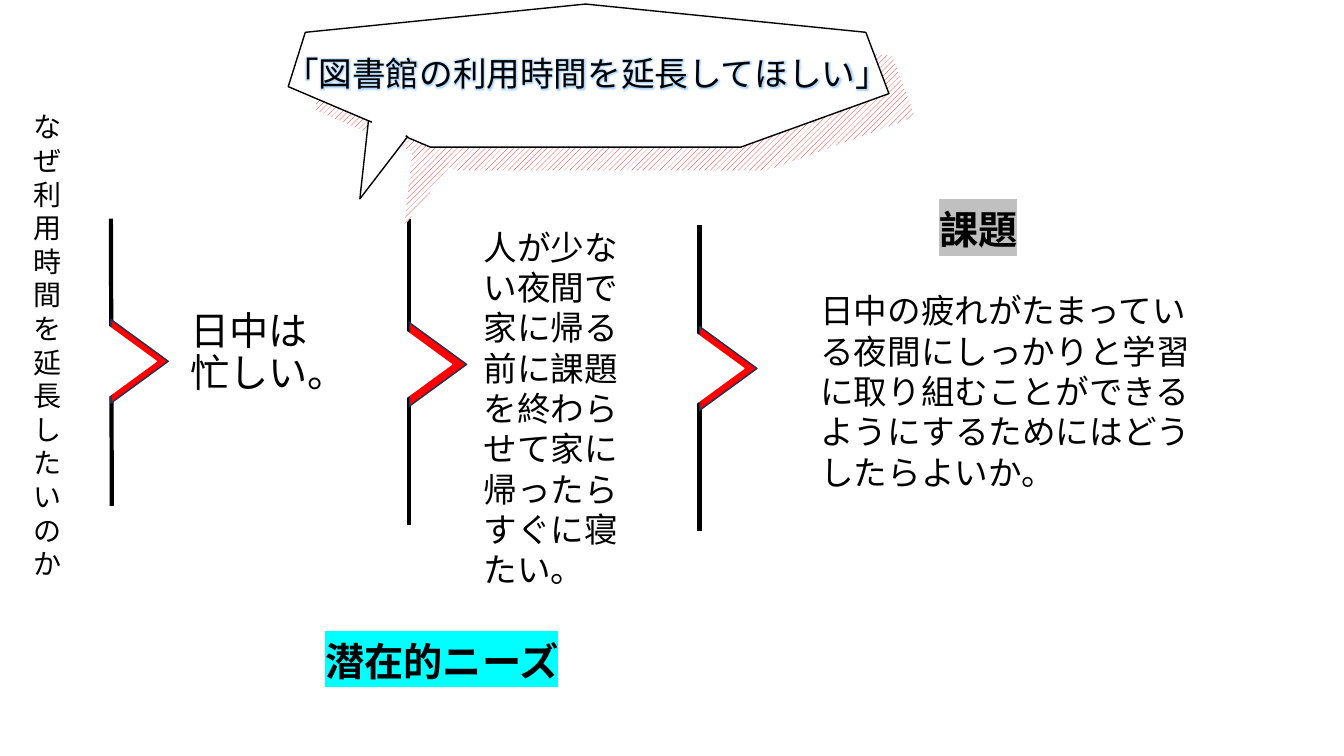
import pptx
import pptx.dml.color
import pptx.enum.dml
import pptx.enum.shapes
import pptx.enum.text
import pptx.oxml
import pptx.oxml.ns
import pptx.util

Pt = pptx.util.Pt
SHAPES = pptx.enum.shapes.MSO_SHAPE
FONT = "Noto Sans CJK JP"
BLACK, WHITE, RED, NAVY = "000000", "FFFFFF", "FF0000", "1E3256"
BUBBLE = [(0, 59), (12.2, 20.2), (212.4, 0), (412.6, 20.2),
          (429.1, 64), (323.3, 102.2), (101.5, 102.2)]
NAMESPACE = pptx.oxml.ns.nsdecls("a")


def color(value):
    return pptx.dml.color.RGBColor.from_string(value)


def paint(shape, fill, line):
    shape.shadow.inherit = False
    shape.fill.solid()
    shape.fill.fore_color.rgb = color(fill)
    shape.line.color.rgb = color(line)
    shape.line.width = Pt(1)


def hatch(shape):
    shape.shadow.inherit = False
    shape.fill.patterned()
    shape.fill.pattern = pptx.enum.dml.MSO_PATTERN.WIDE_UPWARD_DIAGONAL
    shape.fill.fore_color.rgb = color(RED)
    shape.fill.back_color.rgb = color(WHITE)
    shape.line.fill.background()


def add_rotated(slide, kind, left, top, width, height, rotation):
    shape = slide.shapes.add_shape(kind, Pt(left), Pt(top), Pt(width), Pt(height))
    shape.rotation = rotation
    return shape


def add_bubble(slide, left, top):
    points = [(Pt(left + x), Pt(top + y)) for x, y in BUBBLE]
    builder = slide.shapes.build_freeform(*points[0])
    builder.add_line_segments(points[1:], close=True)
    return builder.convert_to_shape()


def add_tail(slide, left, top):
    return add_rotated(slide, SHAPES.FLOWCHART_EXTRACT, left, top, 30.2, 54, 201.9)


def add_chevron(slide, x, top, length, slant, middle, gap):
    """A vertical line whose centre opens into a red arrow point."""
    line = slide.shapes.add_connector(
        pptx.enum.shapes.MSO_CONNECTOR.STRAIGHT, Pt(x), Pt(top), Pt(x + slant), Pt(top + length))
    line.line.color.rgb = color(BLACK)
    line.line.width = Pt(3)
    line._element.spPr.append(pptx.oxml.parse_xml(f"<a:effectLst {NAMESPACE}/>"))
    width, height = 59.8, 41
    for left, fill, outline in ((x - 9.4, RED, NAVY), (x - 9.4 - gap, WHITE, WHITE)):
        triangle = add_rotated(slide, SHAPES.ISOSCELES_TRIANGLE,
                               left, middle - height / 2, width, height, 90)
        paint(triangle, fill, outline)


def add_text(slide, text, left, top, width, height, size, bold=False, wrap=True, spacing=None):
    box = slide.shapes.add_textbox(Pt(left), Pt(top), Pt(width), Pt(height))
    box.text_frame.word_wrap = wrap
    para = box.text_frame.paragraphs[0]
    para.add_run().text = text
    para.line_spacing = spacing
    para.font.size = Pt(size)
    para.font.bold = bold
    para.font.color.rgb = color(BLACK)
    para.font.name = FONT
    para.font._element.append(pptx.oxml.parse_xml(f'<a:ea {NAMESPACE} typeface="{FONT}"/>'))
    return box


def add_span_effect(box, xml):
    span = box.text_frame.paragraphs[0].runs[0]
    span._r.get_or_add_rPr().append(pptx.oxml.parse_xml(xml))


def add_label(slide, text, left, top, width, marker):
    box = add_text(slide, text, left, top, width, 41, 28, bold=True, wrap=False)
    add_span_effect(box, f'<a:highlight {NAMESPACE}><a:srgbClr val="{marker}"/></a:highlight>')


def add_title(slide, text):
    box = add_text(slide, text, 196.6, 20.9, 781.2, 66.2, 24, spacing=0.9)
    box.text_frame.vertical_anchor = pptx.enum.text.MSO_ANCHOR.MIDDLE
    add_span_effect(box, f'<a:effectLst {NAMESPACE}><a:glow rad="{Pt(5)}"><a:srgbClr val="3399FF">'
                         '<a:alpha val="40000"/></a:srgbClr></a:glow></a:effectLst>')


def main():
    deck = pptx.Presentation()
    deck.slide_width, deck.slide_height = Pt(960), Pt(540)
    slide = deck.slides.add_slide(deck.slide_layouts[6])

    hatch(add_bubble(slide, 224.6, 19.5))
    add_chevron(slide, 79.2, 156.2, 205.2, 0.7, 258.1, 8.6)
    add_chevron(slide, 292.3, 156.2, 218.9, 0, 260.3, 10.8)
    add_chevron(slide, 499.7, 160.6, 218.9, 0, 263.2, 9.4)

    add_text(slide, "なぜ利用時間を延長したいのか", 16.6, 74.9, 48.2, 346.3, 20)
    add_text(slide, "日中は忙しい。", 128.9, 218.9, 109.4, 198.7, 28, spacing=0.9)
    add_text(slide, "人が少ない夜間で家に帰る前に課題を終わらせて家に帰ったらすぐに寝たい。",
             338.4, 158.4, 123.1, 269.3, 24)
    add_text(slide, "日中の疲れがたまっている夜間にしっかりと学習に取り組むことができるようにするためにはどうしたらよいか。",
             578.9, 203.8, 283.7, 152.6, 24)

    paint(add_bubble(slide, 205.9, 2.9), WHITE, BLACK)
    paint(add_tail(slide, 252, 90), WHITE, BLACK)
    hatch(add_tail(slide, 283.7, 109.4))
    add_title(slide, "「図書館の利用時間を延長してほしい」")
    paint(add_rotated(slide, SHAPES.OVAL, 266.4, 72.7, 25.9, 31, 25.1), WHITE, WHITE)

    add_label(slide, "潜在的ニーズ", 225.4, 451.4, 184.3, "00FFFF")
    add_label(slide, "課題", 663.8, 143.3, 71.3, "C0C0C0")
    deck.save("out.pptx")


if __name__ == "__main__":
    main()
